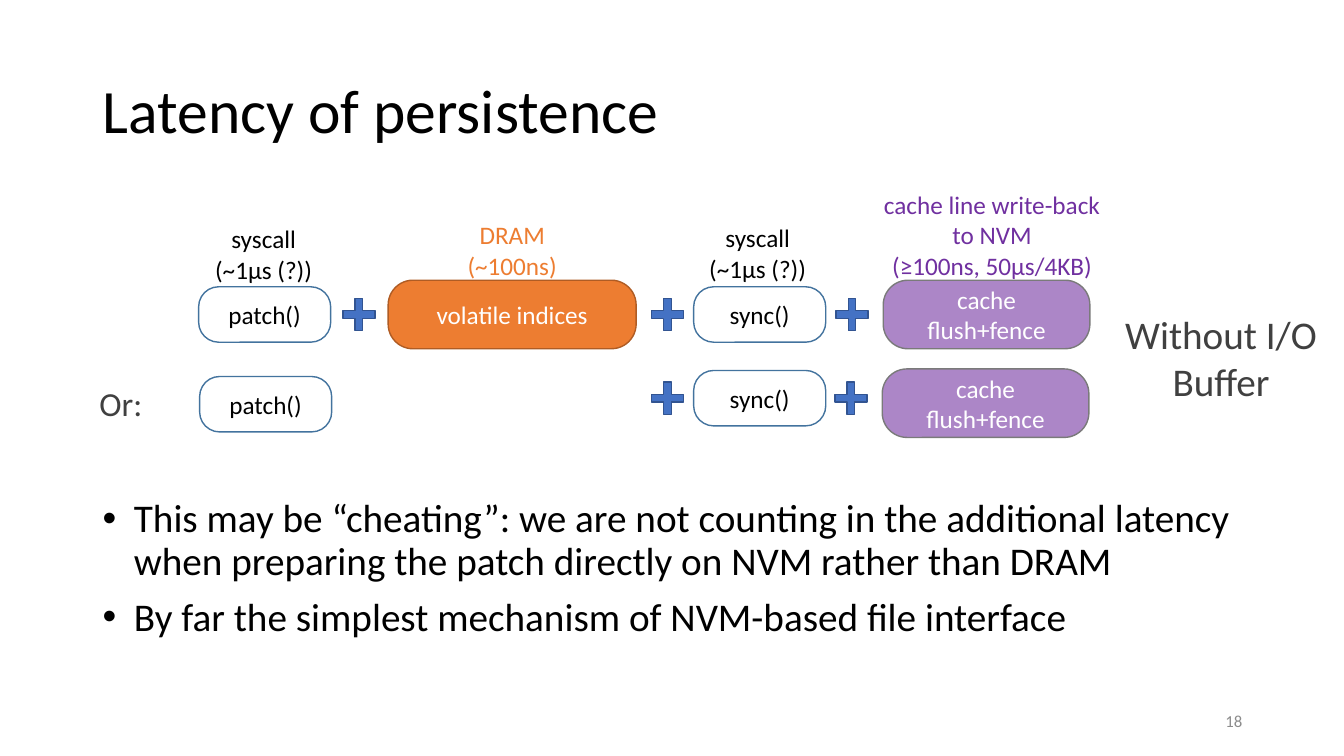
from lxml import etree
from pptx import Presentation
from pptx.dml.color import RGBColor
from pptx.enum import shapes, text
from pptx.oxml import ns
from pptx.util import Inches, Pt

# Content
TITLE = "Latency of persistence"
PAGE = "18"
OR_LABEL = "Or:"
SIDE_NOTE = ["Without I/O", "Buffer"]
BULLETS = [
    "This may be “cheating”: we are not counting in the additional latency "
    "when preparing the patch directly on NVM rather than DRAM",
    "By far the simplest mechanism of NVM-based file interface",
]
SYSCALL = ["syscall", "(~1μs (?))"]
# Step: wording, kind, left edge, middle height
STEPS = [
    ("patch()", "call", 1.97, 3.12),
    ("volatile indices", "dram", 3.85, 3.12),
    ("sync()", "call", 6.88, 3.12),
    ("cache flush+fence", "flush", 8.76, 3.12),
    ("patch()", "call", 1.98, 4.01),
    ("sync()", "call", 6.88, 3.95),
    ("cache flush+fence", "flush", 8.75, 4.0),
]
# Cost: lines, colour name, box
COSTS = [
    (SYSCALL, "ink", (1.98, 2.17, 1.27, 0.71)),
    (["DRAM", "(~100ns)"], "orange", (4.42, 2.13, 1.32, 0.71)),
    (SYSCALL, "ink", (6.88, 2.16, 1.27, 0.71)),
    (["cache line write-back", "to NVM", "(≥100ns, 50μs/4KB)"], "purple",
     (8.61, 1.83, 2.46, 1.01)),
]
# Plus signs: middle height, left edges
PLUSES = [(3.12, (3.4, 6.46, 8.29)), (3.95, (6.46, 8.28))]
PLUS_SIZE = 0.32

THEME = {
    "font": "Calibri",
    "ink": "000000", "soft": "404040", "grey": "8C8C8C", "white": "FFFFFF",
    "orange": "ED7D31", "purple": "7030A0", "blue": "4472C4",
    "orange_edge": "AF5C24", "flush_edge": "7A7A7A",
    "blue_edge": "325491", "call_edge": "43739E",
    "title": 44, "body": 28, "or": 24, "step": 18, "page": 12,
}
# Kind of step: width, height, fill, opacity in percent, edge, text colour
KINDS = {
    "call": (1.31, 0.55, None, 100, "call_edge", "ink"),
    "dram": (2.46, 0.68, "orange", 100, "orange_edge", "white"),
    "flush": (2.05, 0.68, "purple", 58, "flush_edge", "white"),
}

prs = Presentation()
prs.slide_width, prs.slide_height = Inches(13.33), Inches(7.5)
slide = prs.slides.add_slide(prs.slide_layouts[6])


def color(name):
    return RGBColor.from_string(THEME[name])


def write(holder, lines, size="step", ink="ink", align="CENTER",
          anchor="TOP", spacing=None, before=None, bullet=None):
    frame = holder.text_frame
    frame.word_wrap = True
    frame.vertical_anchor = getattr(text.MSO_ANCHOR, anchor)
    for i, line in enumerate(lines):
        para = frame.add_paragraph() if i else frame.paragraphs[0]
        para.alignment = getattr(text.PP_ALIGN, align)
        if spacing:
            para.line_spacing = spacing
        if before:
            para.space_before = Pt(before)
        if bullet:
            props = para._p.get_or_add_pPr()
            props.set("marL", str(Inches(0.31)))
            props.set("indent", str(Inches(-0.31)))
            etree.SubElement(props, ns.qn("a:buFont"), typeface="Arial")
            etree.SubElement(props, ns.qn("a:buChar"), char=bullet)
        run = para.add_run()
        run.text = line
        run.font.name = THEME["font"]
        run.font.size = Pt(THEME[size])
        run.font.color.rgb = color(ink)


def write_at(box, lines, **form):
    write(slide.shapes.add_textbox(*map(Inches, box)), lines, **form)


def draw(preset, box, adjust, fill, edge, opacity=100):
    part = slide.shapes.add_shape(preset, *map(Inches, box))
    part.shadow.inherit = False
    part.adjustments[0] = adjust
    part.line.color.rgb = color(edge)
    part.line.width = Pt(1)
    if fill is None:
        part.fill.background()
        return part
    part.fill.solid()
    part.fill.fore_color.rgb = color(fill)
    if opacity < 100:
        tint = part._element.spPr.find(ns.qn("a:solidFill"))[0]
        etree.SubElement(tint, ns.qn("a:alpha"), val=str(opacity * 1000))
    return part


# Title and page number
write_at((0.92, 0.4, 11.5, 1.45), [TITLE], size="title", align="LEFT",
         anchor="MIDDLE", spacing=0.9)
write_at((9.42, 6.95, 3, 0.4), [PAGE], size="page", ink="grey",
         align="RIGHT", anchor="MIDDLE")

# Steps of both variants, centred on their heights
for wording, kind, left, middle in STEPS:
    width, height, fill, opacity, edge, ink = KINDS[kind]
    step = draw(shapes.MSO_SHAPE.ROUNDED_RECTANGLE,
                (left, middle - height / 2, width, height),
                0.361, fill, edge, opacity)
    write(step, [wording], ink=ink, anchor="MIDDLE")

# Plus signs between the steps
for middle, lefts in PLUSES:
    for left in lefts:
        draw(shapes.MSO_SHAPE.CROSS,
             (left, middle - PLUS_SIZE / 2, PLUS_SIZE, PLUS_SIZE),
             0.383, "blue", "blue_edge")

# Costs above the steps
for lines, ink, box in COSTS:
    write_at(box, lines, ink=ink)

# Row label, side note and bullets
write_at((0.5, 3.75, 1.4, 0.5), [OR_LABEL], size="or", ink="soft")
write_at((11, 3.03, 2.22, 1.04), SIDE_NOTE, size="body", ink="soft")
write_at((0.92, 4.9, 11.5, 1.79), BULLETS, size="body", align="LEFT",
         spacing=0.9, before=10, bullet="•")

prs.save("out.pptx")
